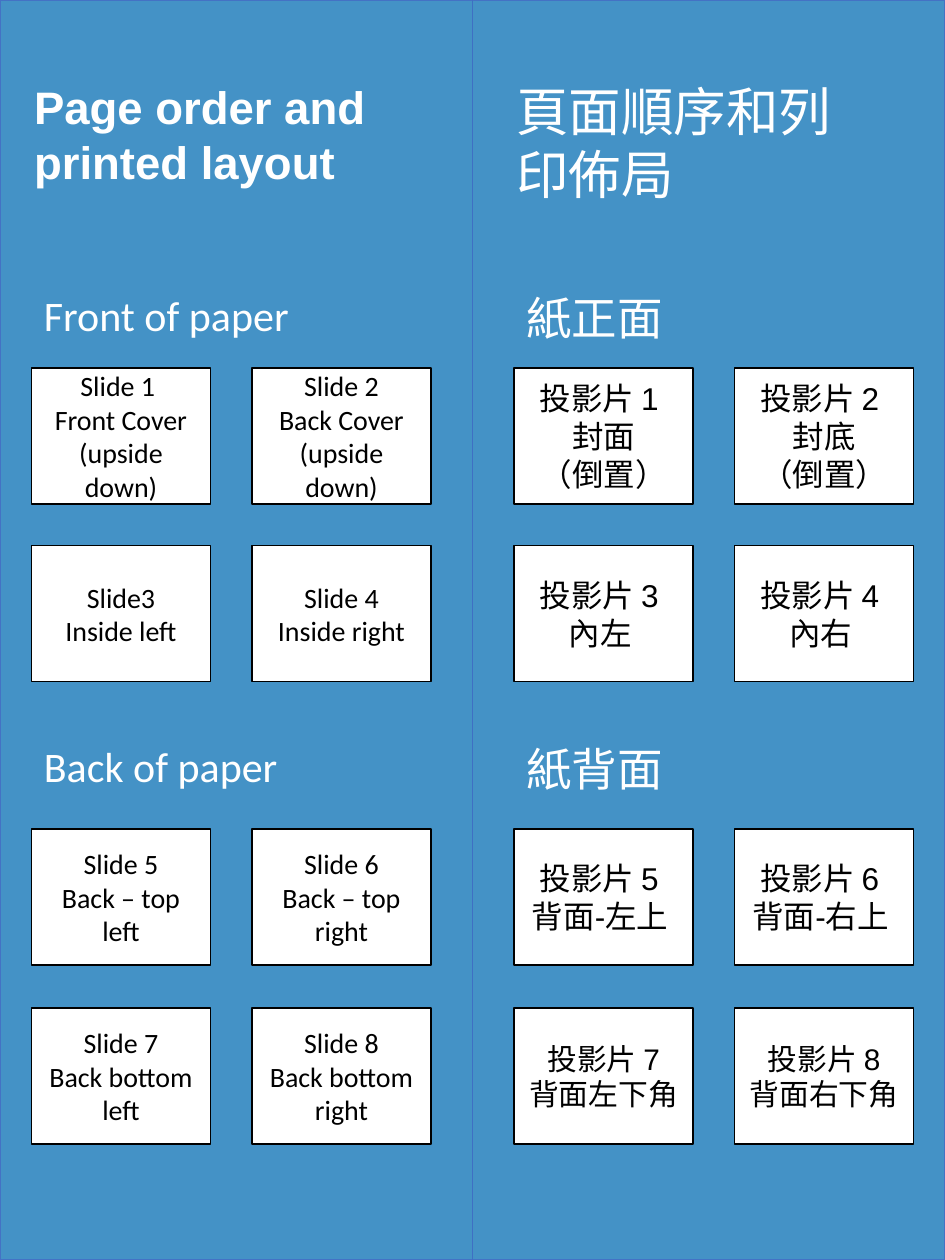
from dataclasses import dataclass

from lxml import etree
from pptx import Presentation
from pptx.dml.color import RGBColor
from pptx.enum import shapes, text
from pptx.oxml.ns import qn
from pptx.util import Inches, Pt


@dataclass(frozen=True)
class Theme:
    background: str = "4492C6"
    border: str = "4472C4"
    divider: str = "3F6FC3"
    white: str = "FFFFFF"
    black: str = "000000"


THEME = Theme()
PAGE_WIDTH, PAGE_HEIGHT = 7.5, 10
CARD_WIDTH, CARD_HEIGHT = 1.42, 1.08
COLUMN_PITCH = 1.75
SECTION_TOPS = [(2.25, (2.92, 4.33)), (5.83, (6.58, 8))]  # heading, card rows

HALVES = [
    {
        "left": 0.25, "font": "Calibri", "heading_size": 24,
        "title": ["Page order and ", "printed layout"],
        "title_left": 0.17, "title_size": 26, "title_bold": True,
        "row_sizes": [[16, 16], [16, 16]],
        "sections": [
            ("Front of paper", [
                [["Slide 1 ", "Front Cover", "(upside down)"],
                 ["Slide 2", "Back Cover", "(upside down)"]],
                [["Slide3", "Inside left"], ["Slide 4", "Inside right"]],
            ]),
            ("Back of paper", [
                [["Slide 5", "Back – top left"], ["Slide 6", "Back – top right"]],
                [["Slide 7", "Back bottom left"], ["Slide 8", "Back bottom right"]],
            ]),
        ],
    },
    {
        "left": 4.08, "font": "Arial", "heading_size": 26,
        "title": ["頁面順序和列印佈局"],
        "title_left": 4, "title_size": 30, "title_bold": False,
        "row_sizes": [[18, 18], [18, 17]],
        "sections": [
            ("紙正面", [
                [["投影片 1 ", "封面", "（倒置）"], ["投影片 2 ", "封底", "（倒置）"]],
                [["投影片 3 ", "內左 "], ["投影片 4 ", "內右 "]],
            ]),
            ("紙背面", [
                [["投影片 5 ", "背面-左上 "], ["投影片 6 ", "背面-右上 "]],
                [["投影片 7", "背面左下角 "], ["投影片 8", "背面右下角 "]],
            ]),
        ],
    },
]


def place(shape, left, top, width, height):
    shape.left, shape.top = Inches(left), Inches(top)
    shape.width, shape.height = Inches(width), Inches(height)


def write(shape, lines, font, size, color, bold=False,
          align=text.PP_ALIGN.LEFT, anchor=text.MSO_ANCHOR.TOP):
    """Fill a shape with one paragraph per line."""
    frame = shape.text_frame
    frame.word_wrap = True
    frame.auto_size = text.MSO_AUTO_SIZE.NONE
    frame.vertical_anchor = anchor
    for index, line in enumerate(lines):
        paragraph = frame.add_paragraph() if index else frame.paragraphs[0]
        paragraph.alignment = align
        paragraph.space_before = Pt(0)
        run = paragraph.add_run()
        run.text = line
        run.font.name, run.font.size, run.font.bold = font, Pt(size), bold
        run.font.color.rgb = RGBColor.from_string(color)


def add_rectangle(slide, left, top, width, height, fill, line):
    shape = slide.shapes.add_shape(
        shapes.MSO_SHAPE.RECTANGLE, *map(Inches, (left, top, width, height)))
    shape.shadow.inherit = False
    shape.fill.solid()
    shape.fill.fore_color.rgb = RGBColor.from_string(fill)
    shape.line.color.rgb = RGBColor.from_string(line)
    shape.line.width = Pt(1)
    return shape


def add_half(slide, half, title):
    place(title, half["title_left"], 0.58, 3.08, 1.31)
    write(title, half["title"], "Arial", half["title_size"], THEME.white,
          half["title_bold"])
    for (heading, rows), (heading_top, row_tops), sizes in zip(
            half["sections"], SECTION_TOPS, half["row_sizes"]):
        box = slide.shapes.add_textbox(
            *map(Inches, (half["left"], heading_top, 3.25, 0.5)))
        write(box, [heading], half["font"], half["heading_size"], THEME.white)
        for row, top, size in zip(rows, row_tops, sizes):
            for column, lines in enumerate(row):
                card = add_rectangle(
                    slide, half["left"] + column * COLUMN_PITCH, top,
                    CARD_WIDTH, CARD_HEIGHT, THEME.white, THEME.black)
                write(card, lines, half["font"], size, THEME.black,
                      align=text.PP_ALIGN.CENTER, anchor=text.MSO_ANCHOR.MIDDLE)


def add_divider(slide, page):
    middle = Inches(PAGE_WIDTH / 2)
    divider = slide.shapes.add_connector(
        shapes.MSO_CONNECTOR.STRAIGHT, middle, 0, middle, Inches(PAGE_HEIGHT))
    divider.begin_connect(page, 0)
    divider.end_connect(page, 2)
    divider.line.color.rgb = RGBColor.from_string(THEME.divider)
    divider.line.width = Pt(0.75)
    etree.SubElement(divider.element.spPr, qn("a:effectLst"))


def main():
    presentation = Presentation()
    presentation.slide_width = Inches(PAGE_WIDTH)
    presentation.slide_height = Inches(PAGE_HEIGHT)
    slide = presentation.slides.add_slide(presentation.slide_layouts[5])
    title = slide.shapes.title
    page = add_rectangle(slide, 0, 0, PAGE_WIDTH, PAGE_HEIGHT,
                         THEME.background, THEME.border)
    title.element.addprevious(page.element)  # send the page colour to the back
    second_title = slide.shapes.add_textbox(0, 0, 0, 0)
    for half, half_title in zip(HALVES, (title, second_title)):
        add_half(slide, half, half_title)
    add_divider(slide, page)
    presentation.save("out.pptx")


if __name__ == "__main__":
    main()
